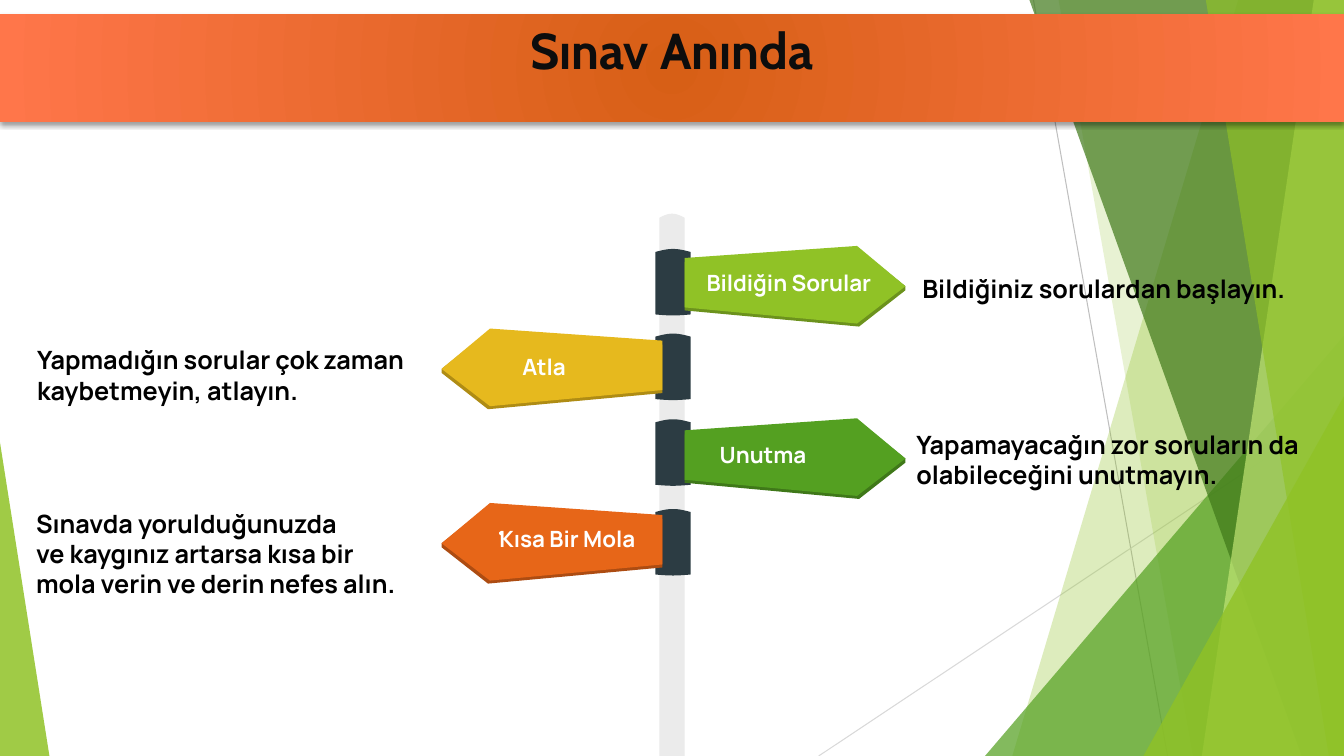
from math import pi, sin

from pptx import Presentation
from pptx.dml.color import RGBColor as RGB
from pptx.enum.shapes import MSO_CONNECTOR as LINK, MSO_SHAPE as KIND
from pptx.enum.text import MSO_ANCHOR as ANCHOR, MSO_AUTO_SIZE as AUTO, PP_ALIGN as ALIGN
from pptx.oxml import parse_xml
from pptx.oxml.ns import nsdecls, qn
from pptx.oxml.xmlchemy import OxmlElement as Node
from pptx.util import Inches, Pt

WIDE, HIGH = 13.33, 7.5
BLACK, WHITE = RGB(0, 0, 0), RGB(255, 255, 255)
INK = RGB(0x0D, 0x0D, 0x0D)
LIME, GREEN, FOREST = RGB(0x90, 0xC2, 0x26), RGB(0x54, 0xA0, 0x21), RGB(0x3F, 0x78, 0x19)
PALE, OLIVE = RGB(0xC0, 0xE4, 0x74), RGB(0x6C, 0x92, 0x1D)
GOLD, BRONZE = RGB(0xE6, 0xB9, 0x1E), RGB(0xAF, 0x8C, 0x14)
ORANGE, RUST = RGB(0xE7, 0x66, 0x18), RGB(0xAD, 0x4C, 0x12)
EMBER, CORAL = RGB(0xD7, 0x5F, 0x16), RGB(0xFF, 0x76, 0x4A)
SLATE, POLE = RGB(0x2C, 0x3C, 0x43), RGB(0xEB, 0xEB, 0xEB)
GREY, MIST = RGB(0xBF, 0xBF, 0xBF), RGB(0xD9, 0xD9, 0xD9)

# Outline of a sign pointing right, measured from its fixed end
FACE = [(1.71, 0), (0, 0.12), (0, 0.61), (1.71, 0.77), (2.19, 0.4)]
EDGE = [(1.73, 0), (0, 0.13), (0, 0.61), (1.73, 0.77), (2.19, 0.41), (2.19, 0.37)]

# Sleeve top, sign top, direction, face, edge, label, label box
SIGNS = [
    (2.47, 2.44, 1, LIME, OLIVE, "Bildiğin Sorular", (6.91, 2.62, 1.86, 0.37)),
    (3.31, 3.26, -1, GOLD, BRONZE, "Atla", (5.07, 3.45, 0.64, 0.37)),
    (4.16, 4.15, 1, GREEN, FOREST, "Unutma", (7.04, 4.33, 1.07, 0.37)),
    (5.05, 4.99, -1, ORANGE, RUST, "Kısa Bir Mola", (4.81, 5.16, 1.59, 0.37)),
]

NOTES = [
    ((9.05, 2.66, 3.94, 0.4), ["Bildiğiniz sorulardan başlayın."]),
    ((8.99, 4.21, 4.14, 0.71), ["Yapamayacağın zor soruların da", "olabileceğini unutmayın."]),
    ((0.27, 3.37, 3.99, 0.71), ["Yapmadığın sorular çok zaman", "kaybetmeyin, atlayın."]),
    ((0.26, 4.99, 4.03, 1.01), ["Sınavda yorulduğunuzda", "ve kaygınız artarsa kısa bir",
                                "mola verin ve derin nefes alın."]),
]


def put(item, values):
    for name, value in values.items():
        setattr(item, name, value)


def box(values):
    return [Inches(v) for v in values]


def paint(shape, color, alpha=100):
    shape.shadow.inherit = False
    shape.fill.solid()
    shape.fill.fore_color.rgb = color
    shape.line.fill.background()
    if alpha < 100:
        node = Node("a:alpha")
        node.set("val", str(alpha * 1000))
        shape.fill._xPr.find(".//" + qn("a:srgbClr")).append(node)
    return shape


def shard(shapes, points, color, alpha=100):
    points = [tuple(box(p)) for p in points]
    pen = shapes.build_freeform(*points[0])
    pen.add_line_segments(points[1:], close=True)
    return paint(pen.convert_to_shape(), color, alpha)


def facet(shapes, top, foot, color, alpha):
    points = [(top, 0), (WIDE, 0), (WIDE, HIGH), (foot, HIGH)]
    shard(shapes, points, color, alpha)


def wedge(shapes, area, tip, color, alpha):
    shape = shapes.add_shape(KIND.ISOSCELES_TRIANGLE, *box(area))
    shape.adjustments[0] = tip
    paint(shape, color, alpha)


def ray(shapes, start, end, color):
    line = shapes.add_connector(LINK.STRAIGHT, *box(start + end))
    line.line.color.rgb = color
    line.line.width = Pt(0.75)
    line._element.spPr.append(Node("a:effectLst"))


def tube(shapes, left, top, width, height, cap, foot, color):
    """Upright bar with a domed top and a slightly bowed foot."""
    steps = [i / 12 for i in range(13)]
    dome = [(left + width * t, top + cap * (1 - sin(pi * t))) for t in steps]
    base = [(left + width * t, top + height - foot * (1 - sin(pi * t))) for t in steps]
    shard(shapes, dome + base[::-1], color)


def write(frame, lines, size, face, color, align):
    for i, text in enumerate(lines):
        para = frame.paragraphs[0] if i == 0 else frame.add_paragraph()
        para.alignment = align
        run = para.add_run()
        run.text = text
        put(run.font, {"size": Pt(size), "name": face, "bold": True})
        run.font.color.rgb = color


def label(shapes, area, lines, size, color, align=ALIGN.LEFT, wrap=True):
    frame = shapes.add_textbox(*box(area)).text_frame
    put(frame, {"word_wrap": wrap, "auto_size": AUTO.SHAPE_TO_FIT_TEXT})
    write(frame, lines, size, "Manrope", color, align)


def sign(shapes, sleeve, top, way, face, edge, text, area):
    group = shapes.add_group_shape().shapes
    tube(group, 6.5, sleeve, 0.35, 0.66, 0.03, 0.01, SLATE)
    root = 6.79 if way > 0 else 6.57
    for outline, drop, color in ((EDGE, 0.03, edge), (FACE, 0, face)):
        shard(group, [(root + way * x, top + drop + y) for x, y in outline], color)
    align = ALIGN.LEFT if way > 0 else ALIGN.RIGHT
    label(group, area, [text], 16, WHITE, align, False)
    return group


def banner(title):
    left, top, width, height = box((0, 0.14, WIDE, 1.07))
    put(title, {"left": left, "top": top, "width": width, "height": height})
    frame = title.text_frame
    put(frame, {"word_wrap": True, "auto_size": AUTO.NONE, "vertical_anchor": ANCHOR.TOP})
    write(frame, ["Sınav Anında"], 36, "Cabin", INK, ALIGN.CENTER)
    # Radial fill and soft shadow
    props = title._element.spPr
    props.append(parse_xml(
        f'<a:gradFill {nsdecls("a")} rotWithShape="1"><a:gsLst>'
        f'<a:gs pos="0"><a:srgbClr val="{EMBER}"/></a:gs>'
        f'<a:gs pos="100000"><a:srgbClr val="{CORAL}"/></a:gs></a:gsLst>'
        '<a:path path="circle"><a:fillToRect l="100000" t="100000" r="100000" b="100000"/>'
        '</a:path></a:gradFill>'))
    props.append(parse_xml(
        f'<a:effectLst {nsdecls("a")}><a:outerShdw blurRad="{Pt(3.5)}" dist="{Pt(1.7)}" '
        f'dir="5400000" rotWithShape="0"><a:srgbClr val="{BLACK}"><a:alpha val="40000"/>'
        '</a:srgbClr></a:outerShdw></a:effectLst>'))


def scene(shapes):
    ray(shapes, (10.25, 0), (11.58, HIGH), GREY)
    ray(shapes, (WIDE, 4.03), (8.12, HIGH), MIST)
    facet(shapes, 12.28, 10.04, LIME, 30)
    facet(shapes, 10.5, 11.83, LIME, 20)
    wedge(shapes, (9.77, 3.33, 3.56, 4.17), 1, GREEN, 72)
    facet(shapes, 10.21, 12.91, FOREST, 70)
    facet(shapes, 13.03, 11.92, PALE, 70)
    facet(shapes, 11.96, 13.18, LIME, 65)
    wedge(shapes, (11.34, 3.93, 1.99, 3.57), 1, LIME, 80)
    wedge(shapes, (0, 4.39, 0.49, 3.11), 0, LIME, 85)


def main():
    deck = Presentation()
    put(deck, {"slide_width": Inches(WIDE), "slide_height": Inches(HIGH)})
    shapes = deck.slides.add_slide(deck.slide_layouts[5]).shapes
    title = shapes.title

    # Backdrop
    scene(shapes)

    # Signpost
    tube(shapes, 6.54, 2.12, 0.25, 5.59, 0.04, 0.02, POLE)
    for area, lines in NOTES:
        label(shapes, area, lines, 18, BLACK)
    for row in SIGNS:
        group = sign(shapes, *row)
    paint(group.add_shape(KIND.OVAL, *box((4.95, 5.27, 0.04, 0.04))), WHITE)

    # Title banner, in front of the backdrop
    banner(title)
    shapes._spTree.append(title._element)

    deck.save("out.pptx")


if __name__ == "__main__":
    main()
